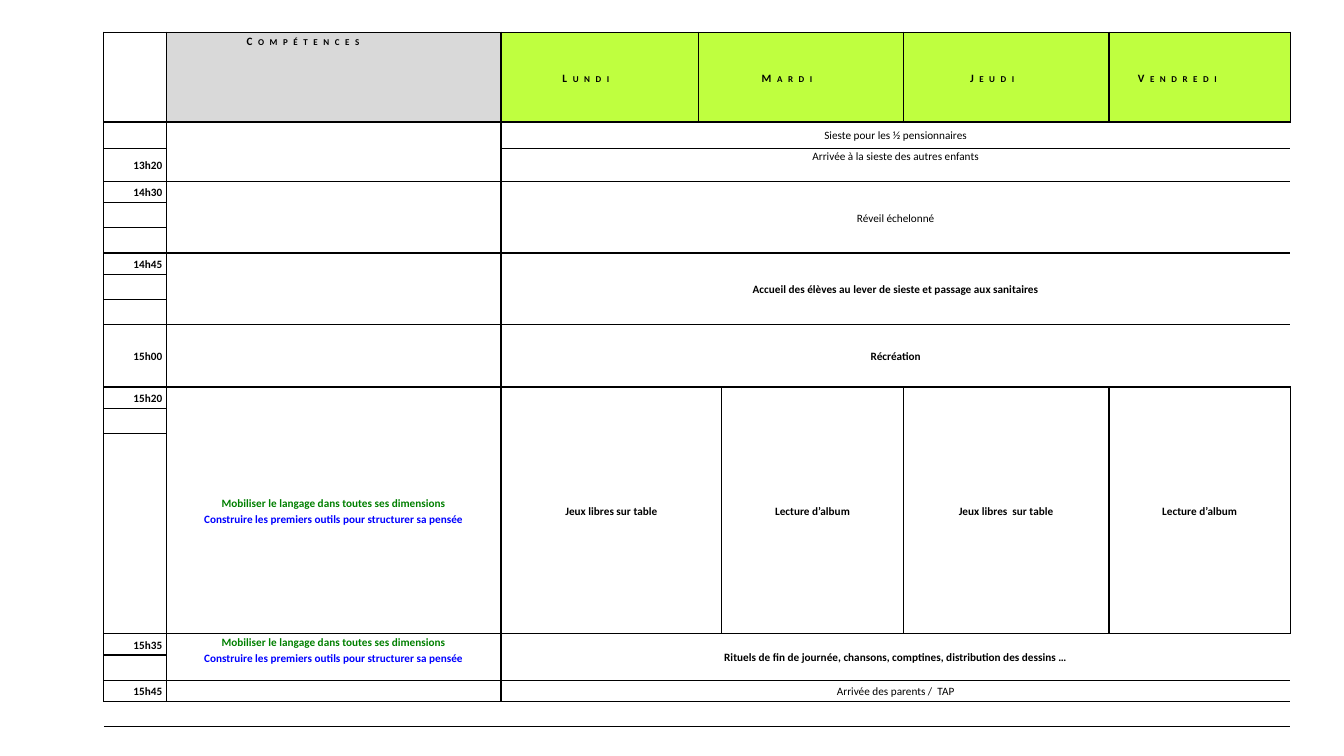
import itertools
from dataclasses import dataclass

import lxml.etree
import pptx
import pptx.dml.color
import pptx.enum.text
import pptx.oxml.ns
import pptx.table
import pptx.util
from pptx.util import Inches

ALIGN = pptx.enum.text.PP_ALIGN
ANCHOR = pptx.enum.text.MSO_ANCHOR
BLACK, WHITE, GREY, LIME = "000000", "FFFFFF", "D9D9D9", "BFFF3F"
GREEN, BLUE = "008000", "0000FF"

COLUMN_WIDTHS = [0.62, 3.32, 1.96, 0.13, 0.1, 0.1, 1.7, 2.04, 1.8]
QUARTER_HOUR = [0.21, 0.25, 0.25]
ROW_HEIGHTS = [0.89, 0.26, 0.33, *QUARTER_HOUR, *QUARTER_HOUR, 0.62,
               0.21, 0.25, 1.99, 0.21, 0.25, 0.21, 0.25]
CLOSING_ROW = len(ROW_HEIGHTS) - 1


@dataclass
class Entry:
    """A block of the timetable, possibly spanning rows and columns."""
    row: int
    col: int
    text: str = ""
    rows: int = 1
    cols: int = 1
    bold: bool = True
    top: bool = False
    header: bool = False
    fill: str = WHITE
    colors: tuple[str, ...] = (BLACK,)
    align: ALIGN = ALIGN.CENTER


def color(hex_value: str) -> pptx.dml.color.RGBColor:
    return pptx.dml.color.RGBColor.from_string(hex_value)


def add_child(parent: lxml.etree._Element, tag: str, **attributes: str) -> lxml.etree._Element:
    return lxml.etree.SubElement(parent, pptx.oxml.ns.qn(tag), attributes)


def draw_borders(cell: pptx.table._Cell, sides: str) -> None:
    properties = cell._tc.get_or_add_tcPr()
    for side in "LRTB":
        line = add_child(properties, f"a:ln{side}", w=str(pptx.util.Pt(1)))
        if side in sides:
            add_child(add_child(line, "a:solidFill"), "a:srgbClr", val=BLACK)
        else:
            add_child(line, "a:noFill")


def format_cell(cell: pptx.table._Cell, entry: Entry, sides: str) -> None:
    draw_borders(cell, sides)
    cell.fill.solid()
    cell.fill.fore_color.rgb = color(entry.fill)
    cell.margin_left = cell.margin_right = Inches(0.04)
    cell.margin_top = cell.margin_bottom = 0
    cell.vertical_anchor = ANCHOR.TOP if entry.top else ANCHOR.MIDDLE


def write_text(cell: pptx.table._Cell, entry: Entry) -> None:
    cell.text_frame.text = entry.text
    for paragraph, hex_value in zip(cell.text_frame.paragraphs, entry.colors):
        paragraph.alignment = entry.align
        paragraph.line_spacing = 1.15
        for run in paragraph.runs:
            run.font.name = "Calibri"
            run.font.size = pptx.util.Pt(8)
            run.font.bold = entry.bold
            run.font.color.rgb = color(hex_value)
            if entry.header:
                properties = run._r.get_or_add_rPr()
                properties.set("cap", "small")
                properties.set("spc", "400")


def draw_entry(table: pptx.table.Table, entry: Entry) -> None:
    last_row, last_col = entry.row + entry.rows - 1, entry.col + entry.cols - 1
    for row, col in itertools.product(range(entry.row, last_row + 1),
                                      range(entry.col, last_col + 1)):
        on_edge = {"L": col == entry.col, "R": col == last_col,
                   "T": row == entry.row, "B": row == last_row}
        if entry.row == CLOSING_ROW:
            on_edge["L"] = on_edge["R"] = False
        cell = table.cell(row, col)
        format_cell(cell, entry, "".join(side for side in on_edge if on_edge[side]))
        if not (entry.text and (row, col) == (entry.row, entry.col)):
            # Small end mark, so that empty cells keep the row height
            add_child(cell.text_frame.paragraphs[0]._p, "a:endParaRPr", sz="800")
    origin = table.cell(entry.row, entry.col)
    if entry.rows * entry.cols > 1:
        origin.merge(table.cell(last_row, last_col))
    if entry.text:
        write_text(origin, entry)


# Time column
start_times = {2: "13h20", 3: "14h30", 6: "14h45", 9: "15h00",
               10: "15h20", 13: "15h35", 15: "15h45"}
hours = [Entry(row, 0, start_times.get(row, ""), align=ALIGN.RIGHT)
         for row in range(len(ROW_HEIGHTS))]

# Header row
headers = [
    Entry(0, 1, "Compétences", top=True, header=True, fill=GREY),
    Entry(0, 2, "Lundi", header=True, fill=LIME),
    Entry(0, 3, "Mardi", cols=4, header=True, fill=LIME),
    Entry(0, 7, "Jeudi", header=True, fill=LIME),
    Entry(0, 8, "Vendredi", header=True, fill=LIME),
]

# Skills column
skills_text = ("Mobiliser le langage dans toutes ses dimensions\n"
               "Construire les premiers outils pour structurer sa pensée")
skills = [
    Entry(1, 1, rows=2),
    Entry(3, 1, rows=3),
    Entry(6, 1, rows=3),
    Entry(9, 1),
    Entry(10, 1, skills_text, rows=3, colors=(GREEN, BLUE)),
    Entry(13, 1, skills_text, rows=2, top=True, colors=(GREEN, BLUE)),
    Entry(15, 1),
]

# Activities shared by all days, then those of each day
activities = [
    Entry(1, 2, "Sieste pour les ½ pensionnaires", cols=7, bold=False),
    Entry(2, 2, "Arrivée à la sieste des autres enfants", cols=7, bold=False, top=True),
    Entry(3, 2, "Réveil échelonné", rows=3, cols=7, bold=False),
    Entry(6, 2, "Accueil des élèves au lever de sieste et passage aux sanitaires",
          rows=3, cols=7),
    Entry(9, 2, "Récréation", cols=7),
    Entry(10, 2, "Jeux libres sur table", rows=3, cols=3),
    Entry(10, 5, "Lecture d’album", rows=3, cols=2),
    Entry(10, 7, "Jeux libres  sur table", rows=3),
    Entry(10, 8, "Lecture d’album", rows=3),
    Entry(13, 2, "Rituels de fin de journée, chansons, comptines, distribution des dessins …",
          rows=2, cols=7),
    Entry(15, 2, "Arrivée des parents /  TAP", cols=7, bold=False),
]

# Closing row, ruled above and below only
closing = [Entry(CLOSING_ROW, col, cols=cols)
           for col, cols in [(1, 1), (2, 2), (4, 2), (6, 3)]]


def main() -> None:
    presentation = pptx.Presentation()
    presentation.slide_width, presentation.slide_height = Inches(13.33), Inches(7.5)
    slide = presentation.slides.add_slide(presentation.slide_layouts[6])

    timetable = slide.shapes.add_table(
        len(ROW_HEIGHTS), len(COLUMN_WIDTHS), Inches(1.03), Inches(0.32),
        Inches(sum(COLUMN_WIDTHS)), Inches(sum(ROW_HEIGHTS))).table
    timetable.first_row = timetable.horz_banding = False
    for column, width in zip(timetable.columns, COLUMN_WIDTHS):
        column.width = Inches(width)
    for row, height in zip(timetable.rows, ROW_HEIGHTS):
        row.height = Inches(height)

    for entry in hours + headers + skills + activities + closing:
        draw_entry(timetable, entry)
    presentation.save("out.pptx")


if __name__ == "__main__":
    main()
